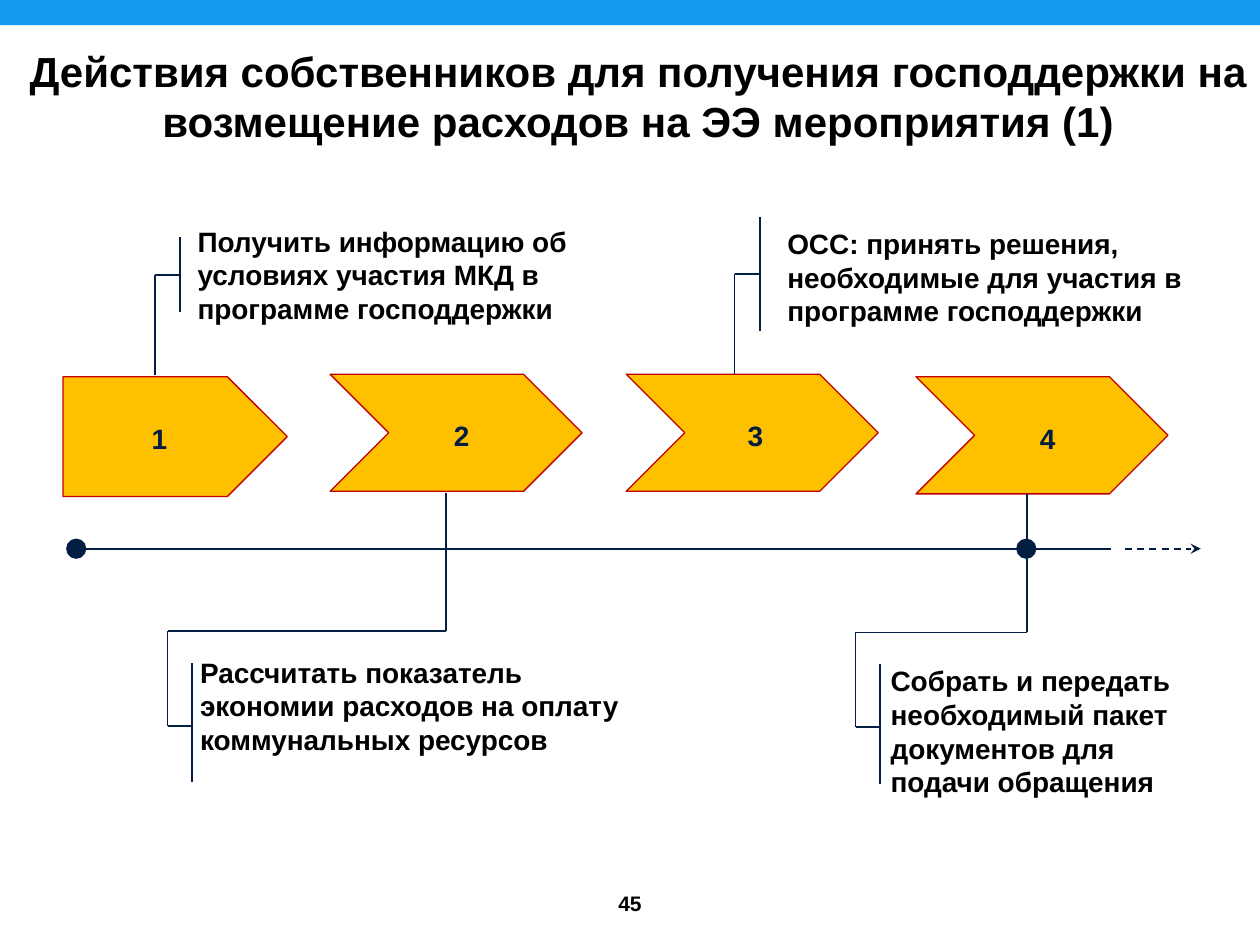
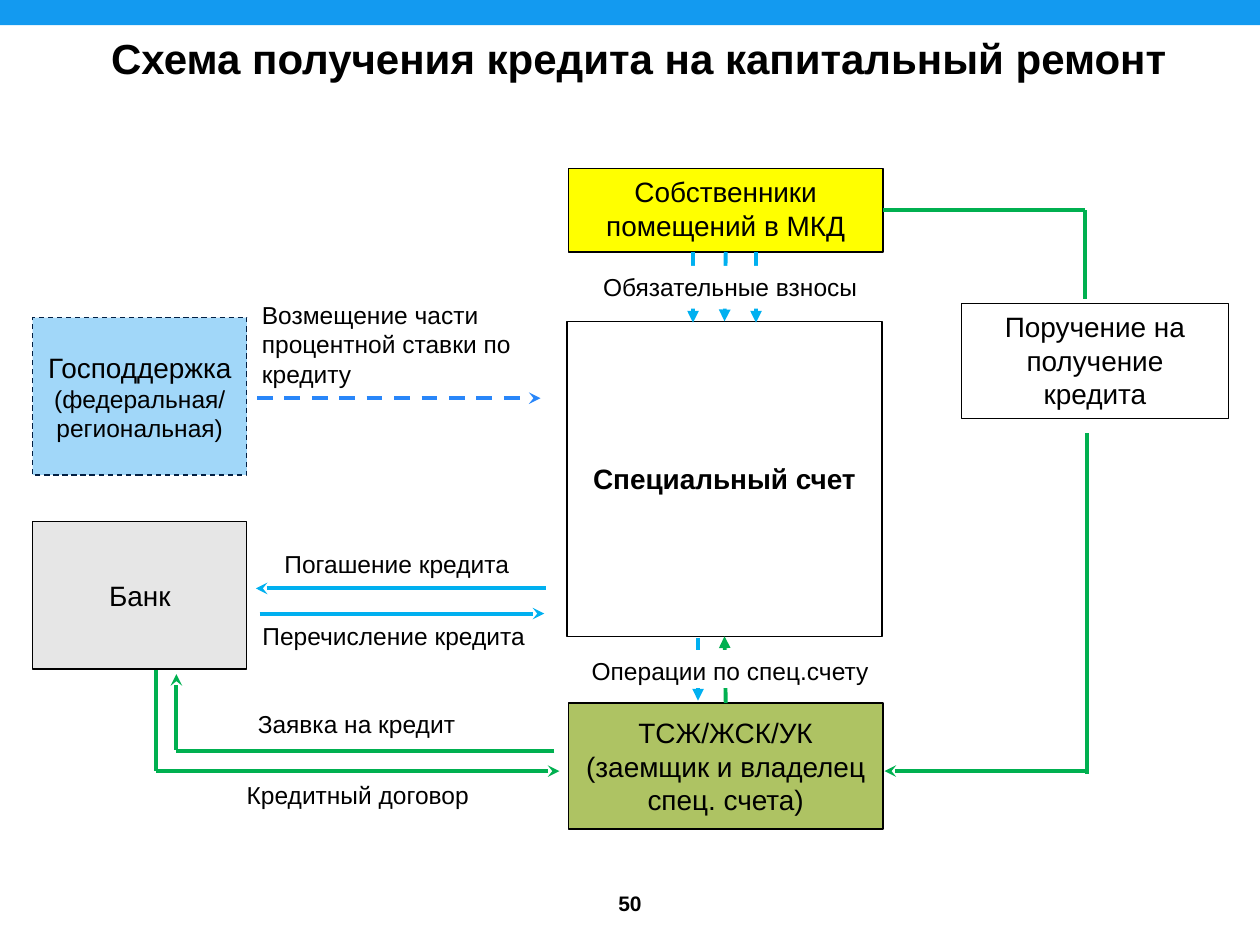
from dataclasses import dataclass
from itertools import pairwise
from typing import Any

from lxml.etree import SubElement
from pptx import Presentation
from pptx.dml.color import RGBColor
from pptx.enum.dml import MSO_LINE
from pptx.enum.shapes import MSO_CONNECTOR, MSO_SHAPE as Kind
from pptx.enum.text import MSO_ANCHOR as Anchor, PP_ALIGN as Align
from pptx.oxml.ns import qn
from pptx.util import Inches, Pt

COLS, ROWS, CELL = 100, 75, 0.1  # slide grid; cell side in inches
FONT = "Arial"
BLACK, WHITE, NAVY = "000000", "FFFFFF", "021F43"
BAND, AMBER, RED = "139AF0", "FFC000", "C00000"
SKY, BLUE, GREEN = "00B0F0", "2986F9", "00B050"
BOTTOM, TOP, RIGHT = 2, 0, 3


def grid(*cells):
    return [Inches(n * CELL) for n in cells]


def tint(code):
    return RGBColor.from_string(code)


def write(shape, lines, size=16, rest=None, bold=False, color=BLACK,
          align=Align.CENTER, anchor=Anchor.TOP, after=None):
    """Fill a shape with lines; 'rest' is the size of all but the first."""
    frame = shape.text_frame
    frame.word_wrap = True
    frame.vertical_anchor = anchor
    for i, line in enumerate(lines.split("\n")):
        para = frame.add_paragraph() if i else frame.paragraphs[0]
        para.alignment = align
        if after:
            para.space_after = Pt(after)
        run = para.add_run()
        run.text = line
        font = run.font
        font.name, font.bold = FONT, bold
        font.size = Pt(rest if i and rest else size)
        font.color.rgb = tint(color)
    return shape


@dataclass
class Area:
    """A region of a slide; its parts are placed from its top left corner."""
    slide: Any
    x: float = 0
    y: float = 0
    w: float = COLS
    h: float = ROWS

    def spot(self, x, y):
        return grid(self.x + x, self.y + y)

    def shape(self, x, y, w, h, kind=Kind.RECTANGLE, fill=None, edge=None,
              dash=None):
        item = self.slide.shapes.add_shape(kind, *self.spot(x, y), *grid(w, h))
        item.shadow.inherit = False
        if fill:
            item.fill.solid()
            item.fill.fore_color.rgb = tint(fill)
        else:
            item.fill.background()
        if edge:
            item.line.color.rgb = tint(edge)
            item.line.width = Pt(0.75)
            if dash:
                item.line.dash_style = dash
        else:
            item.line.fill.background()
        return item

    def text(self, x, y, w, h, lines, **look):
        item = self.slide.shapes.add_textbox(*self.spot(x, y), *grid(w, h))
        return write(item, lines, **look)

    def line(self, start, end, color=NAVY, width=1, dash=None, tip=None,
             begin=None, finish=None):
        """Draw a line; 'begin' and 'finish' are (shape, side) to join."""
        item = self.slide.shapes.add_connector(
            MSO_CONNECTOR.STRAIGHT, *self.spot(*start), *self.spot(*end))
        if begin:
            item.begin_connect(*begin)
        if finish:
            item.end_connect(*finish)
        item.line.color.rgb = tint(color)
        item.line.width = Pt(width)
        if dash:
            item.line.dash_style = dash
        if tip:
            SubElement(item.line._get_or_add_ln(), qn("a:tailEnd"), type=tip)
        SubElement(item._element.spPr, qn("a:effectLst"))

    def trail(self, *points):
        for start, end in pairwise(points):
            self.line(start, end)


def page(deck, number, title, box, anchor=Anchor.TOP):
    slide = deck.slides.add_slide(deck.slide_layouts[6])
    area = Area(slide)
    area.shape(0, 0, COLS, 2, fill=BAND)
    area.text(45.6, 69.7, 8.8, 3.9, str(number), size=12, bold=True,
              anchor=Anchor.MIDDLE)
    area.text(*box, title, size=24, bold=True, anchor=anchor)
    return slide


# Timeline slide

def step(area, number, kind, shift):
    area.shape(0, 0, area.w, area.h, kind, AMBER, RED)
    area.text(shift, 3.05, 5.1, 3.7, str(number), bold=True, color=NAVY)


def above(area, bar, note, lines):
    """Stem that rises from the foot of the area to a bar and a note."""
    area.trail((0, area.h), (0, 0), (2, 0))
    area.line((2, bar), (2, -bar))
    area.text(*note, lines, bold=True, align=Align.LEFT)


def below(area, note, lines):
    """Stem that drops from the area's top right, then runs left to a note."""
    area.trail((area.w, 0), (area.w, 11), (0, 11), (0, 18.5), (1.95, 18.5))
    area.line((1.95, 23), (1.95, 13.5))
    area.text(*note, lines, bold=True, align=Align.LEFT)


def axis(area):
    area.line((0, 0.75), (82.9, 0.75))
    area.line((84, 0.75), (area.w, 0.75), dash=MSO_LINE.DASH, tip="stealth")
    for x in (0, 75.4):
        area.shape(x, 0, 1.5, 1.5, Kind.OVAL, NAVY, NAVY)


def timeline(deck):
    slide = page(deck, 45, "Действия собственников для получения господдержки "
                 "на возмещение расходов на ЭЭ мероприятия (1)",
                 (1.3, 3.1, 98.7, 9.1))
    steps = [
        (Kind.PENTAGON, (5, 29.9, 17.8, 9.5), 5.1),
        (Kind.CHEVRON, (26.2, 29.7, 20, 9.3), 7.9),
        (Kind.CHEVRON, (49.7, 29.7, 20, 9.3), 7.7),
        (Kind.CHEVRON, (72.7, 29.9, 20, 9.3), 7.9),
    ]
    for number, (kind, box, shift) in enumerate(steps, 1):
        step(Area(slide, *box), number, kind, shift)
    axis(Area(slide, 5.3, 42.8, 90, 1.5))
    above(Area(slide, 12.3, 21.8, 2, 8), 3, (2.4, -4.5, 32.7, 9.1),
          "Получить информацию об условиях участия МКД в программе "
          "господдержки")
    above(Area(slide, 58.3, 21.75, 2, 7.95), 4.55, (3.2, -4.25, 41.8, 9.1),
          "ОСС: принять решения, необходимые для участия в программе "
          "господдержки")
    below(Area(slide, 13.3, 39.1, 22.1, 23), (1.6, 12.4, 35.7, 9.1),
          "Рассчитать показатель экономии расходов на оплату коммунальных "
          "ресурсов")
    below(Area(slide, 67.9, 39.2, 13.6, 23), (1.8, 13, 26.9, 11.8),
          "Собрать и передать необходимый пакет документов для подачи "
          "обращения")


# Credit slide

def block(area, box, lines, fill=None, edge=BLACK, dash=None,
          anchor=Anchor.MIDDLE, **look):
    item = area.shape(*box, fill=fill, edge=edge, dash=dash)
    return write(item, lines, anchor=anchor, **look)


def label(area, box, lines, fill=None):
    write(area.shape(*box, fill=fill), lines, size=14)


def arrow(area, start, end, color, tip="stealth", **more):
    area.line(start, end, color, 2.25, tip=tip, **more)


def core(area):
    """Owners, account and firm, one under the other; gives the owners."""
    firm = block(area, (0.1, 42.4, 25, 10),
                 "ТСЖ/ЖСК/УК\n(заемщик и владелец спец. счета)", "AEC363")
    owners = block(area, (0.1, 0, 25, 6.6), "Собственники помещений в МКД",
                   "FFFF00", anchor=Anchor.TOP)
    account = block(area, (0, 12.1, 25, 25), "Специальный счет", WHITE,
                    bold=True)
    for x in (10, 15):
        arrow(area, (x, 6.6), (x, 12.2), SKY, "triangle")
    arrow(area, (12.6, 6.6), (12.5, 12.1), SKY, "triangle",
          begin=(owners, BOTTOM), finish=(account, TOP))
    arrow(area, (10.4, 37.2), (10.4, 42.2), SKY, "triangle")
    arrow(area, (12.6, 42.4), (12.5, 37.1), GREEN, "triangle",
          begin=(firm, TOP), finish=(account, BOTTOM))
    label(area, (0.7, 7.7, 24.5, 3.4), "Обязательные взносы", WHITE)
    label(area, (0.9, 38.2, 24.1, 3), "Операции по спец.счету", WHITE)
    return owners


def aid(area):
    block(area, (0, 1.9, 17, 12.5),
          "Господдержка\n(федеральная/\nрегиональная)", "A1D7F9", NAVY,
          MSO_LINE.DASH, rest=14)
    area.text(17.2, 0, 21.8, 8.1, "Возмещение части процентной ставки по "
              "кредиту", size=14, align=Align.LEFT, after=5.1)
    arrow(area, (17.8, 8.3), (area.w, 8.3), BLUE, dash=MSO_LINE.DASH)


def bank(area):
    block(area, (0, 0, 17, 11.7), "Банк", "E6E6E6")
    arrow(area, (40.7, 5.3), (17.7, 5.3), SKY)
    arrow(area, (18, 7.3), (40.6, 7.3), SKY)
    arrow(area, (41.4, 18.2), (11.4, 18.2), GREEN, None)
    arrow(area, (11.4, 18.1), (11.4, 12.1), GREEN)
    arrow(area, (9.8, 11.8), (9.8, 19.8), GREEN, None)
    arrow(area, (9.8, 19.8), (41.8, 19.8), GREEN)
    for x, y, w, lines in [
        (18.9, 1.7, 20, "Погашение кредита"),
        (17.2, 7.4, 22.9, "Перечисление кредита"),
        (15.7, 14.4, 20, "Заявка на кредит"),
        (15.8, 20, 20, "Кредитный договор"),
    ]:
        label(area, (x, y, w, 3.4), lines)


def order(area, owners):
    """The owners' order for a credit, passed on to the firm."""
    block(area, (6.2, 7.4, 21.2, 9.1), "Поручение на получение кредита",
          anchor=Anchor.TOP)
    arrow(area, (16, 0), (0, 0), GREEN, None, finish=(owners, RIGHT))
    arrow(area, (16, 0), (16, 7), GREEN, None)
    arrow(area, (16.2, 17.7), (16.2, 44.7), GREEN, None)
    arrow(area, (16, 44.5), (0.1, 44.5), GREEN)


def credit(deck):
    slide = page(deck, 50, "Схема получения кредита на капитальный ремонт",
                 (5.1, 2.1, 91.2, 5), Anchor.MIDDLE)
    owners = core(Area(slide, 45, 13.4, 25.1, 52.4))
    aid(Area(slide, 2.6, 23.3, 40.3, 14.4))
    bank(Area(slide, 2.6, 41.4, 41.8, 23.4))
    order(Area(slide, 70.1, 16.7, 27.4, 44.7), owners)


def main():
    deck = Presentation()
    deck.slide_width, deck.slide_height = grid(COLS, ROWS)
    timeline(deck)
    credit(deck)
    deck.save("out.pptx")


if __name__ == "__main__":
    main()
